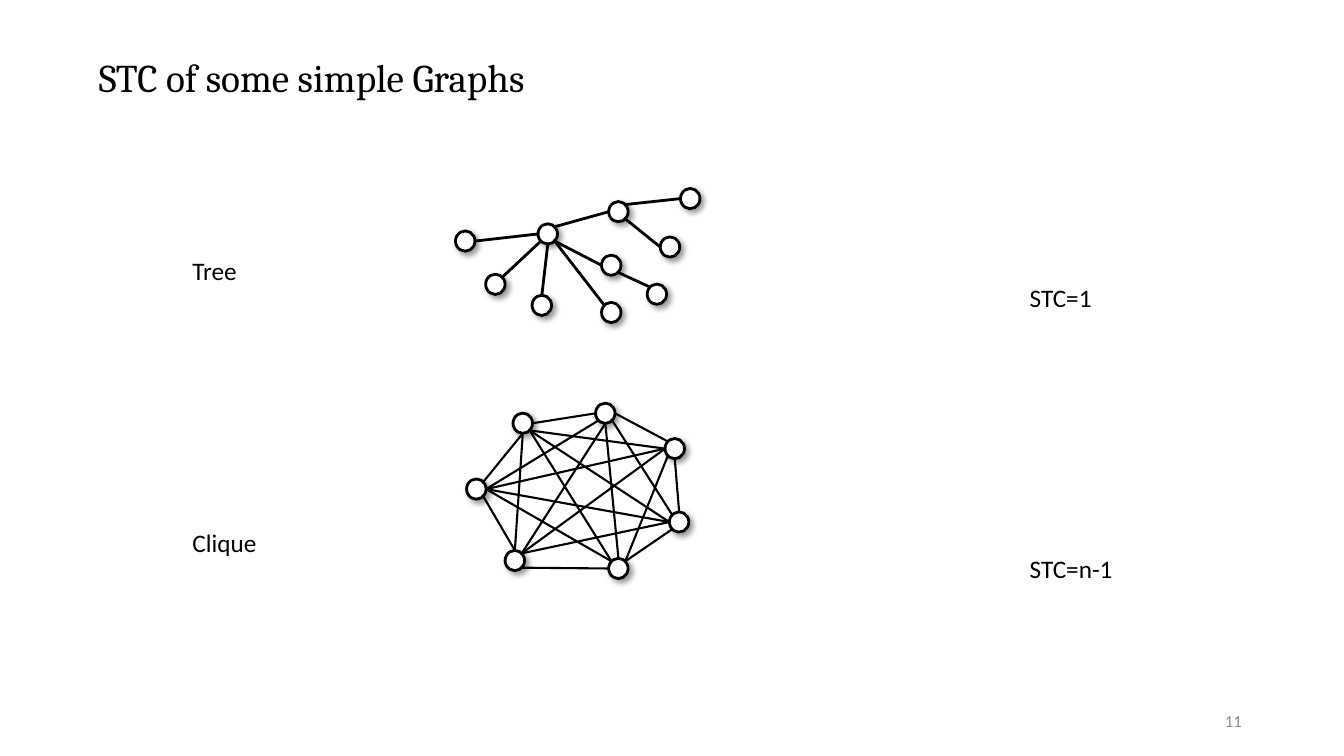
import dataclasses

import lxml.etree
import pptx
import pptx.dml.color
import pptx.enum.shapes
import pptx.enum.text
import pptx.oxml
import pptx.oxml.ns
import pptx.slide
import pptx.util

Cm = pptx.util.Cm
Align = pptx.enum.text.PP_ALIGN

COLORS = {"ink": "000000", "node": "FFFFFF", "page": "8C8C8C"}
NODE_WIDTH, NODE_HEIGHT = 0.49, 0.51
DIAGONAL = 0.5 ** 0.5
# Unit offsets from a node's centre to its eight attachment sites
SITES = {
    "N": (0, -1), "S": (0, 1), "W": (-1, 0), "E": (1, 0),
    "NW": (-DIAGONAL, -DIAGONAL), "NE": (DIAGONAL, -DIAGONAL),
    "SW": (-DIAGONAL, DIAGONAL), "SE": (DIAGONAL, DIAGONAL),
}


@dataclasses.dataclass(frozen=True)
class Label:
    text: str
    left: float
    top: float
    width: float
    height: float = 1.02
    size: int = 18
    font: str = "Calibri"
    color: str = "ink"
    align: Align = Align.LEFT
    wrap: bool = False
    anchor: pptx.enum.text.MSO_ANCHOR = pptx.enum.text.MSO_ANCHOR.TOP


@dataclasses.dataclass(frozen=True)
class Graph:
    """Node corners in cm; each edge is (node, site, node, site)."""
    nodes: dict[str, tuple[float, float]]
    edges: list[tuple[str, str, str, str]]
    edge_weight: float


LABELS = [
    Label("STC of some simple Graphs", 2.24, 1.22, 12.42, 1.45, size=28,
          font="Cambria", align=Align.JUSTIFY, wrap=True),
    Label("Tree", 4.6, 6.32, 1.65),
    Label("STC=1", 25.7, 6.99, 2.08),
    Label("Clique", 4.6, 13.16, 2.16),
    Label("STC=n-1", 25.7, 13.82, 2.62),
    Label("11", 23.93, 17.65, 7.62, size=12, color="page", align=Align.RIGHT,
          wrap=True, anchor=pptx.enum.text.MSO_ANCHOR.MIDDLE),
]

TREE = Graph(
    nodes={
        "hub": (13.56, 5.64),
        "west": (11.48, 5.82),
        "southwest": (12.24, 6.91),
        "south": (13.41, 7.44),
        "southeast": (15.16, 7.62),
        "lower": (15.16, 6.43),
        "lower leaf": (16.31, 7.16),
        "upper": (15.34, 5.08),
        "upper leaf": (17.15, 4.75),
        "middle leaf": (16.64, 5.97),
    },
    edges=[
        ("hub", "NE", "upper", "W"),
        ("hub", "W", "west", "E"),
        ("hub", "SE", "southeast", "NW"),
        ("hub", "SE", "lower", "W"),
        ("hub", "SW", "southwest", "NE"),
        ("hub", "S", "south", "N"),
        ("upper leaf", "W", "upper", "NE"),
        ("upper", "SE", "middle leaf", "W"),
        ("lower", "SE", "lower leaf", "NW"),
    ],
    edge_weight=2,
)

CLIQUE = Graph(
    nodes={
        "a": (11.76, 12.07),
        "b": (12.93, 10.41),
        "c": (15.01, 10.16),
        "d": (16.76, 11.05),
        "e": (16.87, 12.9),
        "f": (15.34, 14.07),
        "g": (12.73, 13.87),
    },
    edges=[
        ("b", "E", "c", "W"), ("c", "E", "d", "NW"), ("d", "S", "e", "N"),
        ("e", "SW", "f", "NE"), ("f", "W", "g", "SE"), ("g", "N", "a", "SE"),
        ("a", "NE", "b", "S"), ("b", "SE", "d", "W"), ("b", "SE", "e", "W"),
        ("b", "SE", "f", "NW"), ("b", "S", "g", "N"), ("c", "SE", "e", "NW"),
        ("c", "S", "f", "N"), ("c", "S", "g", "NE"), ("c", "SW", "a", "E"),
        ("d", "SW", "f", "NE"), ("d", "W", "g", "NE"), ("d", "W", "a", "E"),
        ("e", "W", "g", "NE"), ("e", "W", "a", "E"), ("f", "NW", "a", "E"),
    ],
    edge_weight=1.5,
)

NODE_SHADOW = (
    f'<a:effectLst {pptx.oxml.ns.nsdecls("a")}>'
    '<a:outerShdw blurRad="50800" dist="38100" dir="2700000" algn="tl" rotWithShape="0">'
    f'<a:srgbClr val="{COLORS["ink"]}"><a:alpha val="40000"/></a:srgbClr>'
    '</a:outerShdw></a:effectLst>'
)


def rgb(name: str) -> pptx.dml.color.RGBColor:
    return pptx.dml.color.RGBColor.from_string(COLORS[name])


def add_label(slide: pptx.slide.Slide, label: Label) -> None:
    box = slide.shapes.add_textbox(
        Cm(label.left), Cm(label.top), Cm(label.width), Cm(label.height))
    frame = box.text_frame
    frame.word_wrap = label.wrap
    frame.vertical_anchor = label.anchor
    paragraph = frame.paragraphs[0]
    paragraph.text = label.text
    paragraph.alignment = label.align
    paragraph.font.name = label.font
    paragraph.font.size = pptx.util.Pt(label.size)
    paragraph.font.color.rgb = rgb(label.color)


def add_node(slide: pptx.slide.Slide, left: float, top: float) -> None:
    node = slide.shapes.add_shape(
        pptx.enum.shapes.MSO_SHAPE.OVAL,
        Cm(left), Cm(top), Cm(NODE_WIDTH), Cm(NODE_HEIGHT))
    node.fill.solid()
    node.fill.fore_color.rgb = rgb("node")
    node.line.color.rgb = rgb("ink")
    node.line.width = pptx.util.Pt(2)
    node._element.spPr.append(pptx.oxml.parse_xml(NODE_SHADOW))


def site_point(corner: tuple[float, float], site: str) -> tuple[int, int]:
    dx, dy = SITES[site]
    left, top = corner
    return (Cm(left + NODE_WIDTH / 2 * (1 + dx)),
            Cm(top + NODE_HEIGHT / 2 * (1 + dy)))


def add_graph(slide: pptx.slide.Slide, graph: Graph) -> None:
    for left, top in graph.nodes.values():
        add_node(slide, left, top)
    for start, start_site, end, end_site in graph.edges:
        edge = slide.shapes.add_connector(
            pptx.enum.shapes.MSO_CONNECTOR.STRAIGHT,
            *site_point(graph.nodes[start], start_site),
            *site_point(graph.nodes[end], end_site))
        edge.line.color.rgb = rgb("ink")
        edge.line.width = pptx.util.Pt(graph.edge_weight)
        lxml.etree.SubElement(edge._element.spPr, pptx.oxml.ns.qn("a:effectLst"))


def main() -> None:
    deck = pptx.Presentation()
    deck.slide_width, deck.slide_height = Cm(33.87), Cm(19.05)
    slide = deck.slides.add_slide(deck.slide_layouts[6])
    for graph in (TREE, CLIQUE):
        add_graph(slide, graph)
    for label in LABELS:
        add_label(slide, label)
    deck.save("out.pptx")


if __name__ == "__main__":
    main()
